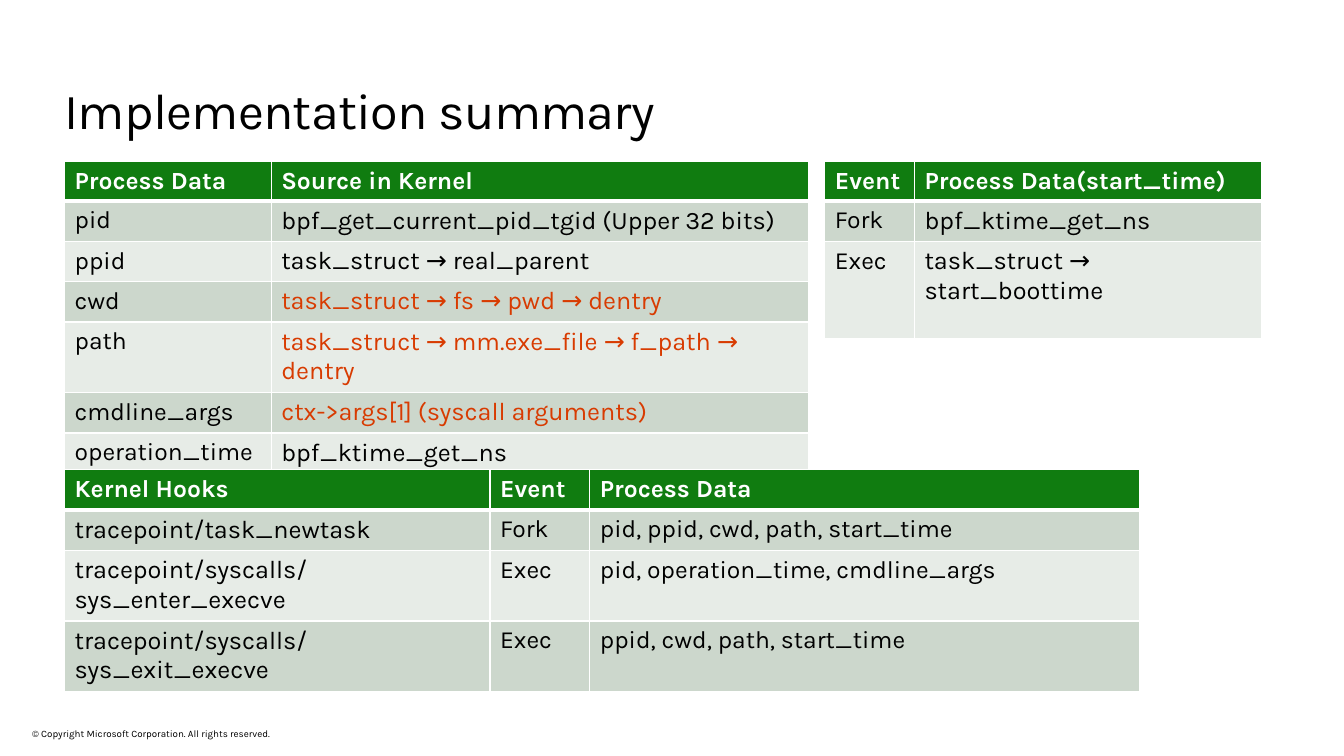
from dataclasses import dataclass

from lxml import etree
from pptx import Presentation
from pptx.dml.color import RGBColor
from pptx.enum import text
from pptx.oxml import ns
from pptx.slide import Slide
from pptx.table import _Cell
from pptx.text.text import _Paragraph
from pptx.util import Inches, Pt


@dataclass(frozen=True)
class Theme:
    font: str = "Karla"
    ink: str = "000000"
    white: str = "FFFFFF"
    highlight: str = "D83B01"
    header: str = "107C10"
    bands: tuple[str, str] = ("CCD7CC", "E7ECE7")
    title_size: float = 36
    label_size: float = 17.6
    code_size: float = 18
    footer_size: float = 7
    rule: float = 1
    header_rule: float = 3


THEME = Theme()


@dataclass(frozen=True)
class Grid:
    left: float
    top: float
    columns: tuple[float, ...]
    row_heights: tuple[float, ...]
    sizes: tuple[float, ...]
    rows: tuple[tuple[str, ...], ...]
    highlighted: tuple[str, ...] = ()


@dataclass(frozen=True)
class Line:
    left: float
    top: float
    width: float
    height: float
    content: str
    size: float
    anchor: text.MSO_ANCHOR
    spacing: int = 0


def add_run(paragraph: _Paragraph, content: str, size: float, color: str,
            bold: bool = False, spacing: int = 0) -> None:
    run = paragraph.add_run()
    run.text = content
    run.font.name = THEME.font
    run.font.size = Pt(size)
    run.font.bold = bold
    run.font.color.rgb = RGBColor.from_string(color)
    if spacing:
        run.font._element.set("spc", str(spacing))


def add_line(slide: Slide, line: Line) -> None:
    frame = slide.shapes.add_textbox(
        Inches(line.left), Inches(line.top), Inches(line.width), Inches(line.height)
    ).text_frame
    frame.word_wrap = True
    frame.vertical_anchor = line.anchor
    frame.margin_left = frame.margin_right = 0
    frame.margin_top = frame.margin_bottom = 0
    add_run(frame.paragraphs[0], line.content, line.size, THEME.ink, spacing=line.spacing)


def add_header_borders(cell: _Cell) -> None:
    properties = cell._tc.get_or_add_tcPr()
    for side in ("lnL", "lnR", "lnT", "lnB"):
        width = THEME.header_rule if side == "lnB" else THEME.rule
        border = etree.SubElement(properties, ns.qn(f"a:{side}"), w=str(Pt(width)))
        fill = etree.SubElement(border, ns.qn("a:solidFill"))
        etree.SubElement(fill, ns.qn("a:srgbClr"), val=THEME.white)


def add_grid(slide: Slide, grid: Grid) -> None:
    table = slide.shapes.add_table(
        len(grid.rows), len(grid.columns), Inches(grid.left), Inches(grid.top),
        Inches(sum(grid.columns)), Inches(sum(grid.row_heights)),
    ).table
    for column, width in zip(table.columns, grid.columns):
        column.width = Inches(width)
    for row, height in zip(table.rows, grid.row_heights):
        row.height = Inches(height)
    for r, values in enumerate(grid.rows):
        is_header = r == 0
        for c, value in enumerate(values):
            cell = table.cell(r, c)
            if is_header:
                add_header_borders(cell)
            cell.fill.solid()
            fill = THEME.header if is_header else THEME.bands[(r - 1) % 2]
            cell.fill.fore_color.rgb = RGBColor.from_string(fill)
            color = THEME.highlight if value in grid.highlighted else THEME.ink
            add_run(
                cell.text_frame.paragraphs[0], value,
                THEME.label_size if is_header else grid.sizes[c],
                THEME.white if is_header else color, bold=is_header,
            )


CWD_SOURCE = "task_struct → fs → pwd → dentry"
PATH_SOURCE = "task_struct → mm.exe_file → f_path → dentry"
ARGS_SOURCE = "ctx->args[1] (syscall arguments)"

LINES = (
    Line(0.32, 7.22, 4.9, 0.12, "© Copyright Microsoft Corporation. All rights reserved.",
         THEME.footer_size, text.MSO_ANCHOR.BOTTOM),
    Line(0.64, 0.78, 12.05, 0.61, "Implementation summary",
         THEME.title_size, text.MSO_ANCHOR.TOP, spacing=-50),
)

GRIDS = (
    Grid(0.64, 1.6, (2.05, 5.33), (0.38,) * 7,
         (THEME.label_size, THEME.code_size), (
             ("Process Data", "Source in Kernel"),
             ("pid", "bpf_get_current_pid_tgid (Upper 32 bits)"),
             ("ppid", "task_struct → real_parent"),
             ("cwd", CWD_SOURCE),
             ("path", PATH_SOURCE),
             ("cmdline_args", ARGS_SOURCE),
             ("operation_time", "bpf_ktime_get_ns"),
         ), (CWD_SOURCE, PATH_SOURCE, ARGS_SOURCE)),
    Grid(8.18, 1.6, (0.89, 3.44), (0.38, 0.39, 0.97),
         (THEME.label_size, THEME.code_size), (
             ("Event", "Process Data(start_time)"),
             ("Fork", "bpf_ktime_get_ns"),
             ("Exec", "task_struct → start_boottime"),
         )),
    Grid(0.64, 4.66, (4.22, 0.99, 5.45), (0.4,) * 4,
         (THEME.code_size, THEME.label_size, THEME.label_size), (
             ("Kernel Hooks", "Event", "Process Data"),
             ("tracepoint/task_newtask", "Fork", "pid, ppid, cwd, path, start_time"),
             ("tracepoint/syscalls/sys_enter_execve", "Exec",
              "pid, operation_time, cmdline_args"),
             ("tracepoint/syscalls/sys_exit_execve", "Exec", "ppid, cwd, path, start_time"),
         )),
)


def main() -> None:
    deck = Presentation()
    deck.slide_width = Inches(13.33)
    deck.slide_height = Inches(7.5)
    slide = deck.slides.add_slide(deck.slide_layouts[6])
    for line in LINES:
        add_line(slide, line)
    for grid in GRIDS:
        add_grid(slide, grid)
    deck.save("out.pptx")


if __name__ == "__main__":
    main()
